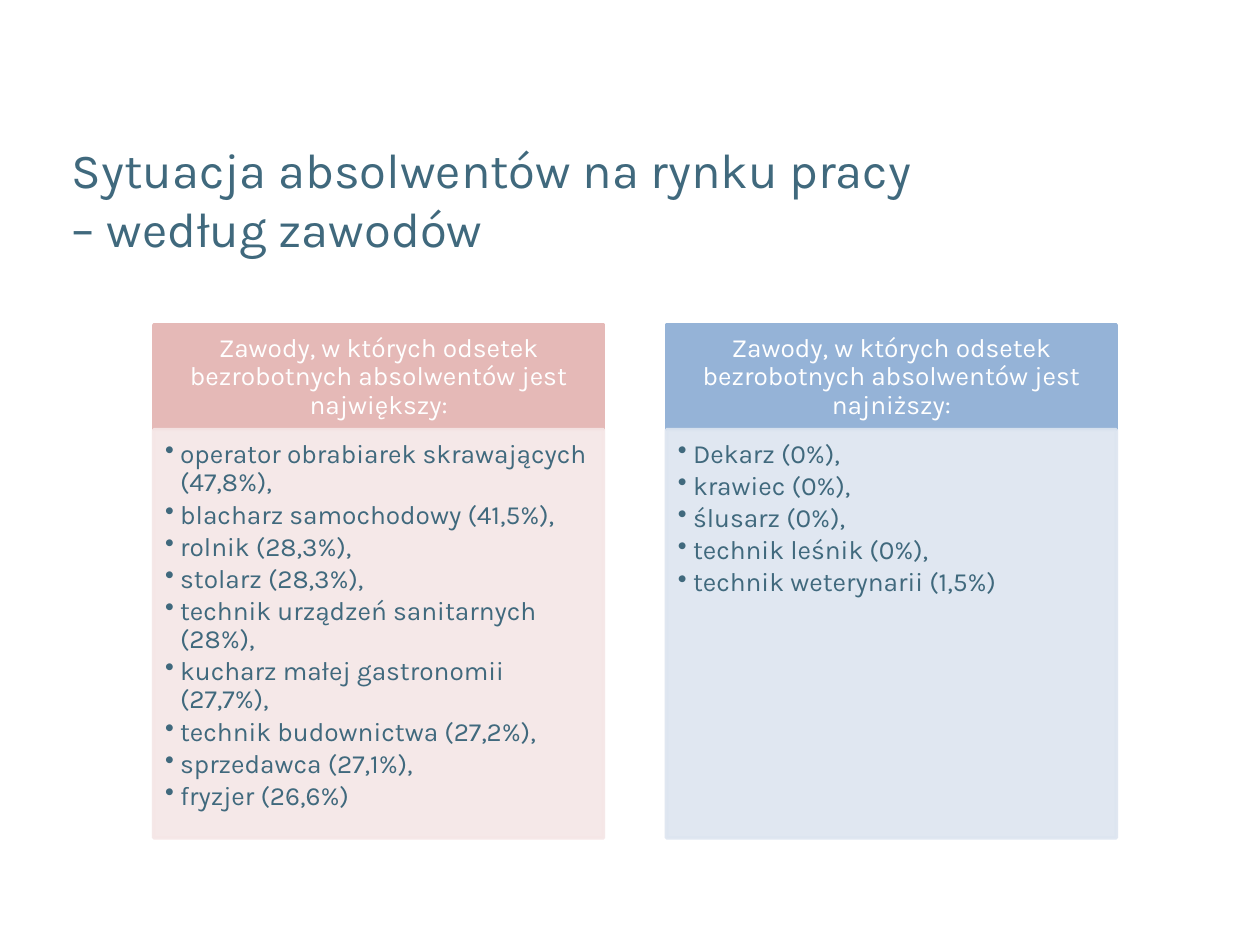
from lxml import etree
from pptx import Presentation
from pptx.dml.color import RGBColor
from pptx.enum.shapes import MSO_SHAPE
from pptx.enum.text import MSO_ANCHOR, PP_ALIGN
from pptx.oxml.ns import qn
from pptx.util import Inches, Pt

RECT = MSO_SHAPE.RECTANGLE
TOP, MIDDLE, BOTTOM = MSO_ANCHOR.TOP, MSO_ANCHOR.MIDDLE, MSO_ANCHOR.BOTTOM
LEFT, CENTER = PP_ALIGN.LEFT, PP_ALIGN.CENTER

TEAL = RGBColor(0x40, 0x69, 0x7D)
WHITE = RGBColor(0xFF, 0xFF, 0xFF)
ROSE = RGBColor(0xE5, 0xB9, 0xB7)
BLUSH = RGBColor(0xF5, 0xE6, 0xE6)
BLUE = RGBColor(0x95, 0xB3, 0xD7)
MIST = RGBColor(0xDD, 0xE5, 0xF0)

COLUMNS = [
    ("Zawody, w których odsetek bezrobotnych absolwentów jest największy:",
     ["operator obrabiarek skrawających (47,8%),",
      "blacharz samochodowy (41,5%),",
      "rolnik (28,3%),",
      "stolarz (28,3%),",
      "technik urządzeń sanitarnych (28%),",
      "kucharz małej gastronomii (27,7%),",
      "technik budownictwa (27,2%),",
      "sprzedawca (27,1%),",
      "fryzjer (26,6%)"],
     ROSE, BLUSH),
    ("Zawody, w których odsetek bezrobotnych absolwentów jest najniższy:",
     ["Dekarz (0%),",
      "krawiec (0%),",
      "ślusarz (0%),",
      "technik leśnik (0%),",
      "technik weterynarii (1,5%)"],
     BLUE, MIST),
]


class Deck:
    font = "Karla"
    size = 15

    def __init__(self, show):
        self.slide = show.slides.add_slide(show.slide_layouts[5])

    def style(self, par, size, color):
        for run in par.runs:
            run.font.name = self.font
            run.font.size = Pt(size)
            run.font.color.rgb = color

    def inset(self, frame, left, top, right, bottom):
        frame.margin_left = Inches(left)
        frame.margin_top = Inches(top)
        frame.margin_right = Inches(right)
        frame.margin_bottom = Inches(bottom)

    def title(self, text, x, y, w, h):
        box = self.slide.shapes.title
        box.left, box.top = Inches(x), Inches(y)
        box.width, box.height = Inches(w), Inches(h)
        frame = box.text_frame
        frame.text = text
        frame.vertical_anchor = BOTTOM
        par = frame.paragraphs[0]
        par.alignment = LEFT
        self.style(par, 28, TEAL)

    def panel(self, x, y, w, h, color):
        box = self.slide.shapes.add_shape(
            RECT, Inches(x), Inches(y), Inches(w), Inches(h))
        box.shadow.inherit = False
        box.fill.solid()
        box.fill.fore_color.rgb = color
        box.line.color.rgb = color
        box.line.width = Pt(2)
        box.text_frame.word_wrap = True
        return box

    def head(self, text, x, y, w, h, color):
        frame = self.panel(x, y, w, h, color).text_frame
        self.inset(frame, 0.12, 0.07, 0.12, 0.07)
        frame.vertical_anchor = MIDDLE
        frame.text = text
        par = frame.paragraphs[0]
        par.alignment = CENTER
        par.line_spacing = 0.9
        self.style(par, self.size, WHITE)

    def bullets(self, items, x, y, w, h, color):
        box = self.panel(x, y, w, h, color)
        for tint in box._element.spPr.iter(qn("a:srgbClr")):
            etree.SubElement(tint, qn("a:alpha"), val="90000")
        frame = box.text_frame
        self.inset(frame, 0.09, 0.09, 0.12, 0.13)
        frame.vertical_anchor = TOP
        frame.text = "\n".join(items)
        for par in frame.paragraphs:
            par.level = 1
            par.alignment = LEFT
            par.line_spacing = 0.9
            par.space_after = Pt(2.1)
            props = par._p.get_or_add_pPr()
            props.set("marL", str(Inches(0.12)))
            props.set("indent", str(Inches(-0.12)))
            etree.SubElement(props, qn("a:buChar"), char="•")
            self.style(par, self.size, TEAL)


def main():
    show = Presentation()
    show.slide_width, show.slide_height = Inches(10), Inches(7.5)
    deck = Deck(show)
    deck.title("Sytuacja absolwentów na rynku pracy \v– według zawodów",
               0.47, 1.09, 9.03, 1)
    left, top, width, gap = 1.22, 2.58, 3.57, 0.5
    tall, deep = 0.83, 3.24
    for i, (text, items, dark, pale) in enumerate(COLUMNS):
        x = left + i * (width + gap)
        deck.head(text, x, top, width, tall, dark)
        deck.bullets(items, x, top + tall, width, deep, pale)
    show.save("out.pptx")


if __name__ == "__main__":
    main()
